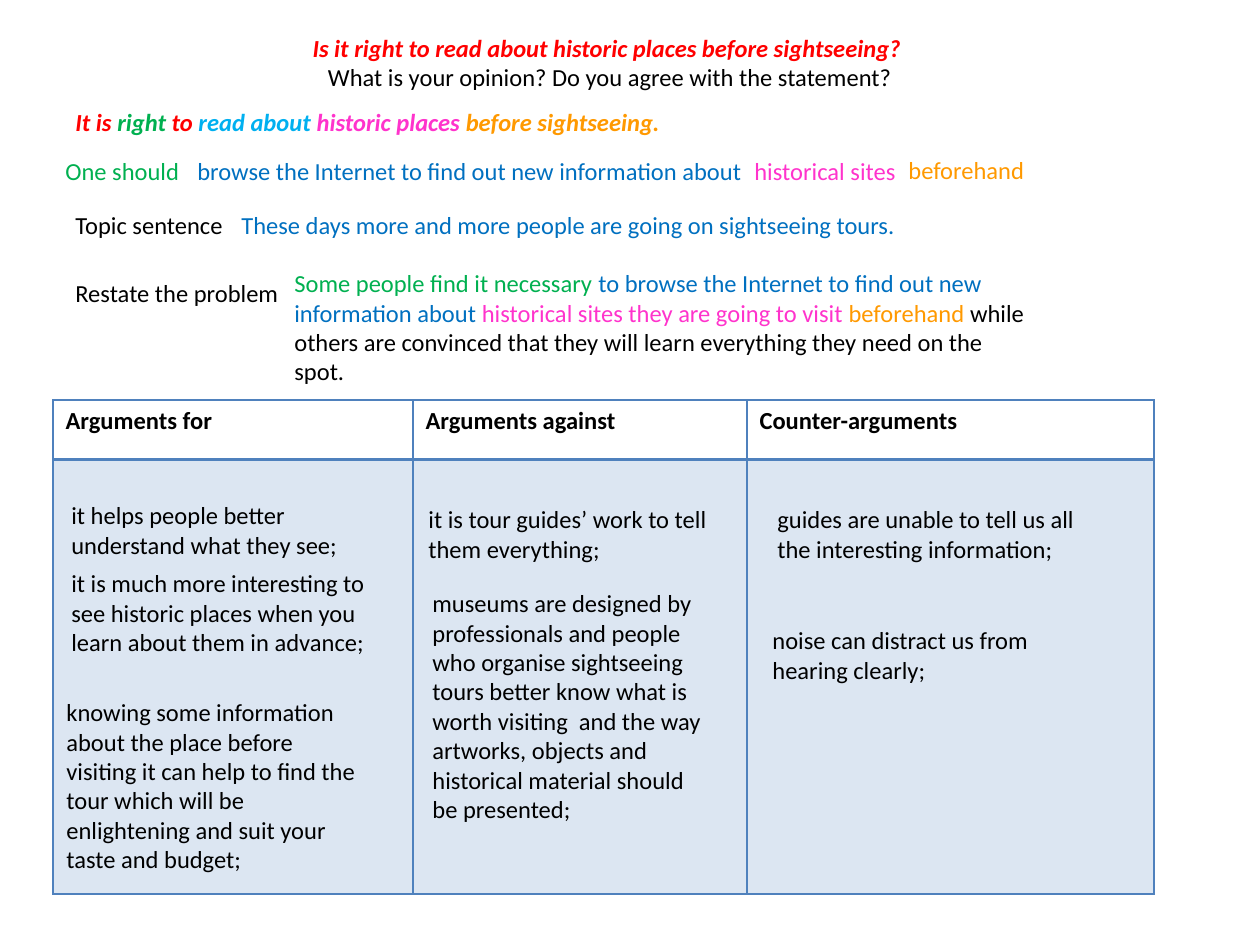
from lxml.etree import SubElement
from pptx import Presentation
from pptx.dml.color import RGBColor
from pptx.enum.text import MSO_ANCHOR as Anchor, MSO_AUTO_SIZE as AutoSize, PP_ALIGN as Align
from pptx.oxml.ns import qn
from pptx.util import Pt

EMU_PER_PX = 914400 / 126
BLACK, RED, GREEN, BLUE = "000000", "FF0000", "00B050", "0070C0"
SKY, PINK, ORANGE = "00B0F0", "FF33CC", "FF9900"
BORDER, CELL_FILL = "4F81BD", "DCE6F2"


def px(value):
    return round(value * EMU_PER_PX)


def color(code):
    return RGBColor.from_string(code)


class SlideBuilder:
    font = "Calibri"
    size = 14

    def __init__(self, slide):
        self.slide = slide

    def runs(self, paragraph, parts, bold=False, italic=False):
        for text, code in parts:
            run = paragraph.add_run()
            run.text = text
            run.font.name = self.font
            run.font.size = Pt(self.size)
            run.font.bold = bold
            run.font.italic = italic
            run.font.color.rgb = color(code)

    def frame(self, left, top, width, height):
        box = self.slide.shapes.add_textbox(px(left), px(top), px(width), px(height))
        box.text_frame.word_wrap = True
        return box.text_frame

    def note(self, left, top, width, height, *parts):
        frame = self.frame(left, top, width, height)
        frame.auto_size = AutoSize.SHAPE_TO_FIT_TEXT
        self.runs(frame.paragraphs[0], parts)

    def lines(self, left, top, width, height, lines, align=Align.LEFT, anchor=Anchor.TOP):
        """Each line is (space before in points, emphasised, parts)."""
        frame = self.frame(left, top, width, height)
        frame.vertical_anchor = anchor
        for index, (space, strong, parts) in enumerate(lines):
            paragraph = frame.add_paragraph() if index else frame.paragraphs[0]
            paragraph.alignment = align
            paragraph.space_before = Pt(space)
            self.runs(paragraph, parts, strong, strong)

    def borders(self, cell, **widths):
        properties = cell._tc.get_or_add_tcPr()
        for index, side in enumerate(("lnL", "lnR", "lnT", "lnB")):
            line = properties.makeelement(qn(f"a:{side}"), {"w": str(Pt(widths.get(side, 1)))})
            fill = SubElement(line, qn("a:solidFill"))
            SubElement(fill, qn("a:srgbClr"), val=BORDER)
            properties.insert(index, line)

    def table(self, left, top, columns, rows, headings):
        table = self.slide.shapes.add_table(
            len(rows), len(columns), px(left), px(top), px(sum(columns)), px(sum(rows))).table
        table.horz_banding = table.first_row = False
        for column, width in zip(table.columns, columns):
            column.width = px(width)
        for row, height in zip(table.rows, rows):
            row.height = px(height)
        for index, heading in enumerate(headings):
            head, body = table.cell(0, index), table.cell(1, index)
            self.runs(head.text_frame.paragraphs[0], [(heading, BLACK)], bold=True)
            head.fill.background()
            body.fill.solid()
            body.fill.fore_color.rgb = color(CELL_FILL)
            self.borders(head, lnB=2)
            self.borders(body, lnT=2)


def main():
    presentation = Presentation()
    presentation.slide_width, presentation.slide_height = px(1260), px(945)
    page = SlideBuilder(presentation.slides.add_slide(presentation.slide_layouts[6]))

    # Question
    page.lines(43, 24, 1134, 77, [
        (0, True, [("Is it right to read about historic places before sightseeing? ", RED)]),
        (0, False, [("What is your opinion? Do you agree with the statement?", BLACK)]),
    ], Align.CENTER, Anchor.MIDDLE)

    # Statement and essay steps
    page.lines(63, 101, 1134, 743, [
        (0, True, [("It is ", RED), ("right ", GREEN), ("to ", RED), ("read about ", SKY),
                   ("historic places ", PINK), ("before sightseeing.", ORANGE)]),
        (42, False, [("Topic sentence", BLACK)]),
        (22, False, [("Restate the problem", BLACK)]),
    ])

    # Paraphrase of the statement
    page.note(53, 150, 174, 42, ("One should", GREEN))
    page.note(185, 150, 769, 42, ("browse the Internet to find out new information about", BLUE))
    page.note(742, 150, 179, 42, ("historical sites", PINK))
    page.note(896, 149, 155, 42, ("beforehand", ORANGE))

    # Arguments table
    page.table(53, 400, [360, 334, 407], [60, 434],
               ["Arguments for", "Arguments against", "Counter-arguments"])

    # Introduction
    page.note(229, 204, 769, 42,
              ("These days more and more people are going on sightseeing tours.", BLUE))
    page.note(282, 262, 769, 131,
              ("Some people find it necessary ", GREEN),
              ("to browse the Internet to find out new information about ", BLUE),
              ("historical sites they are going to visit ", PINK),
              ("beforehand ", ORANGE),
              ("while others are convinced that they will learn everything "
               "they need on the spot.", BLACK))

    # Arguments, column by column
    arguments = [
        (59, 494, 307, 72, "it helps people better understand what they see;"),
        (59, 562, 318, 131, "it is much more interesting to see historic places "
                            "when you learn about them in advance;"),
        (54, 691, 318, 190, "knowing some information about the place before visiting it can help "
                            "to find the tour which will be enlightening and suit your taste "
                            "and budget;"),
        (416, 498, 307, 72, "it is tour guides’ work to tell them everything;"),
        (420, 582, 307, 251, "museums are designed by professionals and people who organise "
                             "sightseeing tours better know what is worth visiting  and the way "
                             "artworks, objects and historical material should be presented;"),
        (765, 498, 360, 72, "guides are unable to tell us all the interesting information;"),
        (760, 619, 360, 72, "noise can distract us from hearing clearly;"),
    ]
    for left, top, width, height, text in arguments:
        page.note(left, top, width, height, (text, BLACK))

    presentation.save("out.pptx")


if __name__ == "__main__":
    main()
